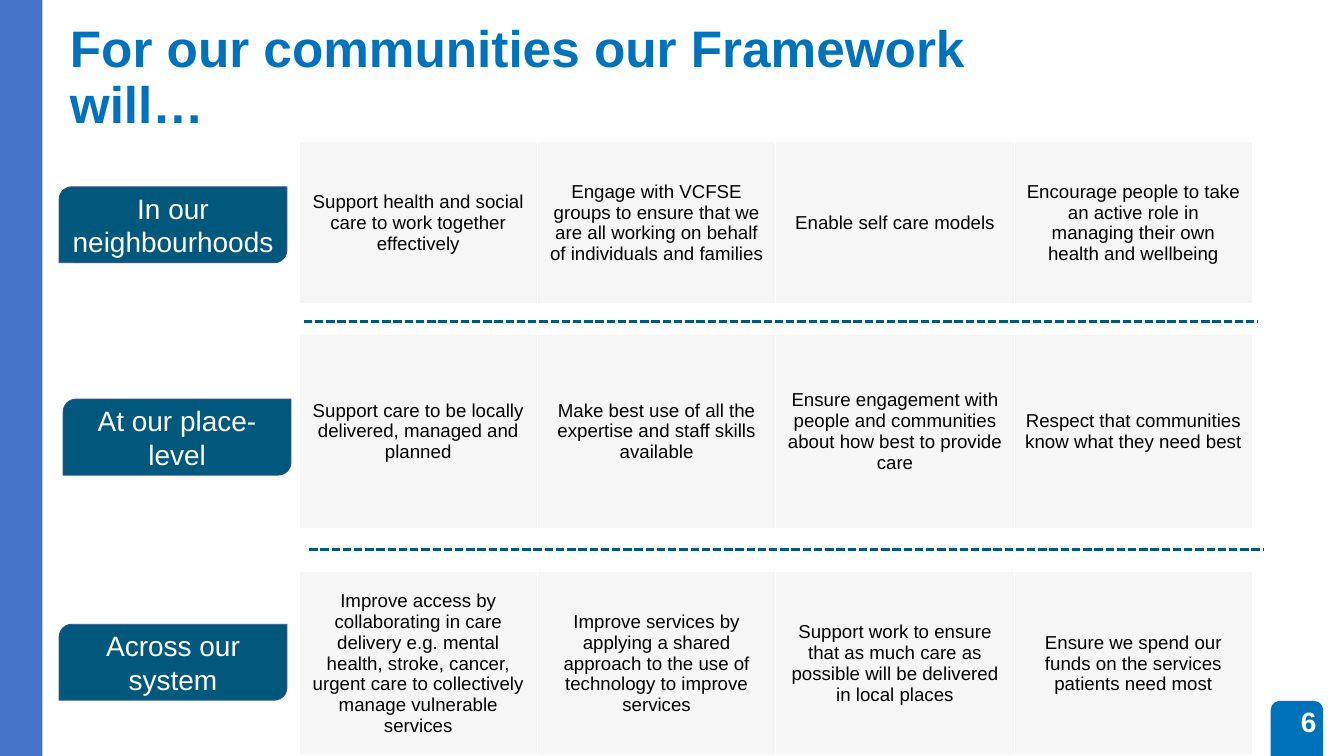
from lxml.etree import SubElement
from pptx import Presentation
from pptx.dml.color import RGBColor
from pptx.enum.dml import MSO_LINE
from pptx.enum.shapes import MSO_CONNECTOR, MSO_SHAPE
from pptx.enum.text import MSO_ANCHOR, MSO_AUTO_SIZE, PP_ALIGN
from pptx.oxml import parse_xml
from pptx.oxml.ns import nsdecls, qn
from pptx.util import Inches, Pt

TITLE = "For our communities our Framework will…"
PAGE = "6"
BANDS = [
    {"label": "In our neighbourhoods", "label_at": (0.88, 2.78), "top": 2.11, "height": 2.42,
     "cells": ["Support health and social care to work together effectively",
               "Engage with VCFSE groups to ensure that we are all working on behalf of individuals and families",
               "Enable self care models",
               "Encourage people to take an active role in managing their own health and wellbeing"]},
    {"label": "At our place-level", "label_at": (0.94, 5.94), "top": 4.97, "height": 2.9,
     "cells": ["Support care to be locally delivered, managed and planned",
               "Make best use of all the expertise and staff skills available",
               "Ensure engagement with people and communities about how best to provide care",
               "Respect that communities know what they need best"]},
    {"label": "Across our system", "label_at": (0.88, 9.29), "top": 8.5, "height": 2.75,
     "cells": ["Improve access by collaborating in care delivery e.g. mental health, stroke, cancer, urgent care to collectively manage vulnerable services",
               "Improve services by applying a shared approach to the use of technology to improve services",
               "Support work to ensure that as much care as possible will be delivered in local places",
               "Ensure we spend our funds on the services patients need most"]},
]
DIVIDERS = [(4.52, 4.79), (4.6, 8.18)]
TABLE_LEFT, TABLE_WIDTH = 4.45, 14.19
LABEL_SIZE = (3.39, 1.13)

THEME = {
    "font": "Arial",
    "blue": "0072BC", "side": "4472C4", "teal": "00597C", "edge": "325491",
    "cell": "F6F6F6", "white": "FFFFFF", "black": "000000",
    "title": 55, "label": 30, "body": 20,
}
CELL_FORMAT = {
    "vertical_anchor": MSO_ANCHOR.MIDDLE,
    "margin_left": Inches(0.15), "margin_right": Inches(0.15),
    "margin_top": Inches(0.07), "margin_bottom": Inches(0.07),
}
FRAME_FORMAT = {
    "word_wrap": True, "auto_size": MSO_AUTO_SIZE.NONE,
    "vertical_anchor": MSO_ANCHOR.MIDDLE,
}
BORDERS = {"lnL": 1, "lnT": 1, "lnR": 1, "lnB": 3}
BORDER_ORDER = ["lnL", "lnR", "lnT", "lnB"]


def rgb(name):
    return RGBColor.from_string(THEME[name])


def apply(target, values):
    for key, value in values.items():
        setattr(target, key, value)


def write(tf, text, size, color, align=PP_ALIGN.CENTER, bold=False):
    p = tf.paragraphs[0]
    p.alignment = align
    r = p.add_run()
    r.text = text
    apply(r.font, {"name": THEME["font"], "size": Pt(THEME[size]), "bold": bold})
    r.font.color.rgb = rgb(color)
    return p


def add_box(s, kind, at, fill, edge=None):
    sp = s.shapes.add_shape(kind, *map(Inches, at))
    sp.shadow.inherit = False
    sp.fill.solid()
    sp.fill.fore_color.rgb = rgb(fill)
    if edge:
        sp.line.color.rgb = rgb(edge)
        sp.line.width = Pt(1)
    else:
        sp.line.fill.background()
    return sp


def add_borders(cell):
    tc_pr = cell._tc.get_or_add_tcPr()
    for i, side in enumerate(BORDER_ORDER):
        tc_pr.insert(i, parse_xml(
            f'<a:{side} {nsdecls("a")} w="{Pt(BORDERS[side])}"><a:solidFill>'
            f'<a:srgbClr val="{THEME["white"]}"/></a:solidFill></a:{side}>'))


def add_band(s, band):
    texts = band["cells"]
    at = (TABLE_LEFT, band["top"], TABLE_WIDTH, band["height"])
    table = s.shapes.add_table(1, len(texts), *map(Inches, at)).table
    apply(table, {"first_row": False, "horz_banding": False})
    for column, cell, text in zip(table.columns, table.rows[0].cells, texts):
        column.width = Inches(TABLE_WIDTH / len(texts))
        apply(cell, CELL_FORMAT)
        cell.fill.solid()
        cell.fill.fore_color.rgb = rgb("cell")
        add_borders(cell)
        write(cell.text_frame, text, "body", "black")


def add_label(s, band):
    sp = add_box(s, MSO_SHAPE.ROUND_2_DIAG_RECTANGLE,
                 band["label_at"] + LABEL_SIZE, "teal", "edge")
    apply(sp.text_frame, FRAME_FORMAT)
    write(sp.text_frame, band["label"], "label", "white")


def add_divider(s, left, y):
    line = s.shapes.add_connector(
        MSO_CONNECTOR.STRAIGHT, *map(Inches, (left, y, left + TABLE_WIDTH, y)))
    line.line.color.rgb = rgb("teal")
    apply(line.line, {"width": Pt(3), "dash_style": MSO_LINE.SQUARE_DOT})
    SubElement(line._element.spPr, qn("a:effectLst"))


def main():
    prs = Presentation()
    apply(prs, {"slide_width": Inches(20), "slide_height": Inches(11.25)})
    s = prs.slides.add_slide(prs.slide_layouts[5])

    add_box(s, MSO_SHAPE.ROUNDED_RECTANGLE, (18.91, 10.43, 0.78, 1.12), "blue")
    add_box(s, MSO_SHAPE.RECTANGLE, (-0.1, -0.12, 0.73, 11.76), "side")

    title = s.shapes.title
    apply(title, {"left": Inches(0.94), "top": Inches(0.09),
                  "width": Inches(15.35), "height": Inches(2.17)})
    apply(title.text_frame, FRAME_FORMAT)
    p = write(title.text_frame, TITLE, "title", "blue", PP_ALIGN.LEFT, True)
    p.line_spacing = 0.9

    number = s.shapes.add_textbox(*map(Inches, (15.19, 10.43, 4.5, 0.6)))
    apply(number.text_frame, FRAME_FORMAT)
    write(number.text_frame, PAGE, "label", "white", PP_ALIGN.RIGHT, True)

    for band in BANDS:
        add_band(s, band)
    for left, y in DIVIDERS:
        add_divider(s, left, y)
    for band in BANDS:
        add_label(s, band)

    prs.save("out.pptx")


if __name__ == "__main__":
    main()
